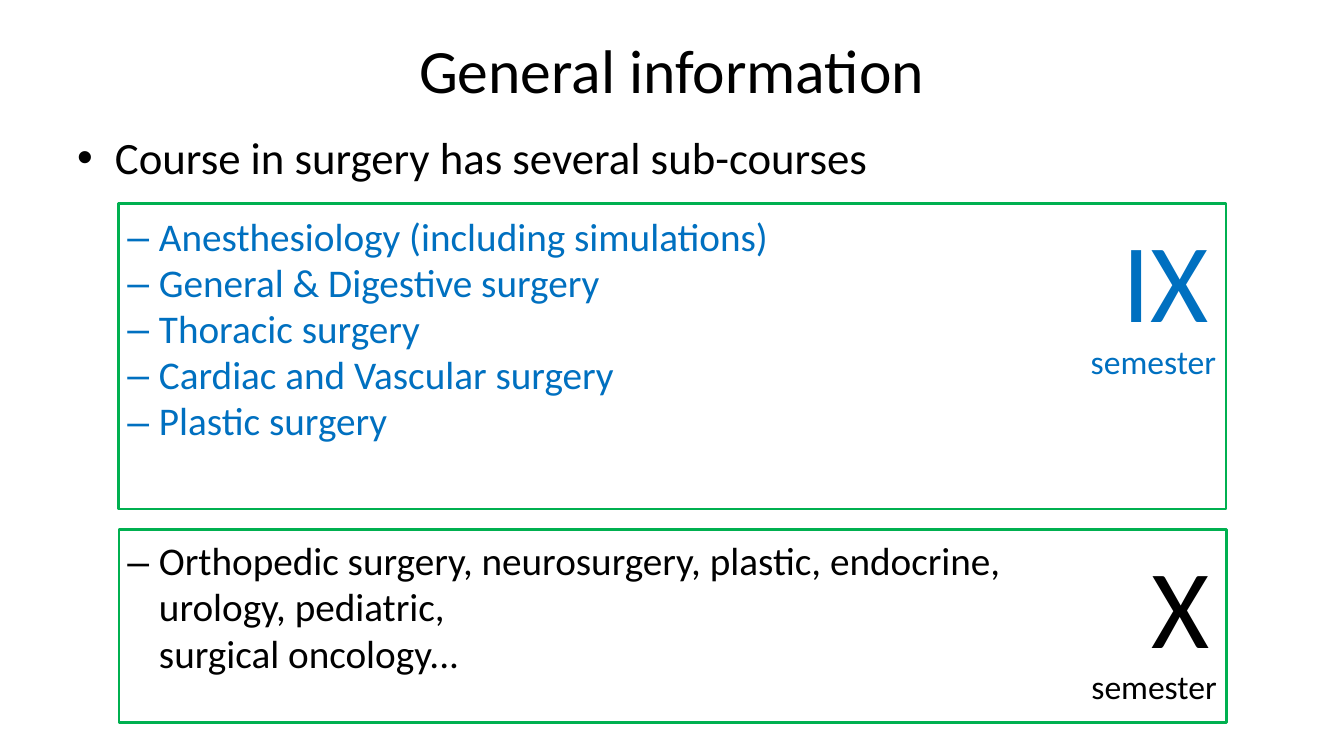
from dataclasses import dataclass

from lxml.etree import SubElement
from pptx import Presentation
from pptx.dml.color import RGBColor
from pptx.enum.shapes import MSO_SHAPE
from pptx.enum.text import MSO_ANCHOR, PP_ALIGN
from pptx.oxml.ns import qn
from pptx.slide import Slide
from pptx.text.text import TextFrame, _Paragraph
from pptx.util import Pt


@dataclass(frozen=True)
class Theme:
    """Colours, font and type sizes of the slide."""
    font: str = "Calibri"
    black: RGBColor = RGBColor(0, 0, 0)
    blue: RGBColor = RGBColor(0x00, 0x70, 0xC0)
    green: RGBColor = RGBColor(0x00, 0xB0, 0x50)
    white: RGBColor = RGBColor(255, 255, 255)
    title: float = 44
    lead: float = 32
    course: float = 28
    numeral: float = 80
    label: float = 24


@dataclass(frozen=True)
class Semester:
    """A framed semester with its numeral."""
    numeral: str
    left: float
    top: float
    height: float
    color: RGBColor


@dataclass(frozen=True)
class Entry:
    """A bulleted entry of the course list."""
    lines: tuple[str, ...]
    color: RGBColor
    size: float
    bullet: str = "–"
    margin: float = 58.5
    hanging: float = 22.5
    before: float = 0
    spacing: float = 0.98


THEME = Theme()
PANEL_WIDTH = 791.3
SEMESTERS = (
    Semester("X", 85, 378, 138.2, THEME.black),
    Semester("IX", 84.5, 145.6, 218, THEME.blue),
)
FIRST_COURSE, *OTHER_COURSES = (
    "Anesthesiology (including simulations)",
    "General & Digestive surgery",
    "Thoracic surgery",
    "Cardiac and Vascular surgery",
    "Plastic surgery",
)
ENTRIES = (
    Entry(("Course in surgery has several sub-courses",), THEME.black, THEME.lead,
          "•", 27, 27, spacing=1),
    Entry((FIRST_COURSE,), THEME.blue, THEME.course, before=22),
    *(Entry((course,), THEME.blue, THEME.course) for course in OTHER_COURSES),
    Entry(("Orthopedic surgery, neurosurgery, plastic, endocrine,",
           "urology, pediatric,", "surgical oncology..."),
          THEME.black, THEME.course, before=67),
)


def add_run(paragraph: _Paragraph, text: str, size: float, color: RGBColor) -> None:
    """Append one styled run."""
    run = paragraph.add_run()
    run.text = text
    run.font.name = THEME.font
    run.font.size = Pt(size)
    run.font.color.rgb = color


def add_text_area(slide: Slide, top: float, height: float) -> TextFrame:
    """Add a wrapping text area of the slide's content width."""
    frame = slide.shapes.add_textbox(Pt(48), Pt(top), Pt(864), Pt(height)).text_frame
    frame.word_wrap = True
    return frame


def draw_semester(slide: Slide, semester: Semester) -> None:
    """Draw a framed panel with the semester numeral at its right."""
    panel = slide.shapes.add_shape(
        MSO_SHAPE.RECTANGLE, Pt(semester.left), Pt(semester.top),
        Pt(PANEL_WIDTH), Pt(semester.height))
    panel.shadow.inherit = False
    panel.fill.solid()
    panel.fill.fore_color.rgb = THEME.white
    panel.line.color.rgb = THEME.green
    panel.line.width = Pt(2)
    frame = panel.text_frame
    frame.word_wrap = True
    frame.vertical_anchor = MSO_ANCHOR.TOP
    frame.margin_top = Pt(5)
    numeral = frame.paragraphs[0]
    numeral.alignment = PP_ALIGN.RIGHT
    add_run(numeral, semester.numeral, THEME.numeral, semester.color)
    add_run(numeral, " ", THEME.label, semester.color)
    label = frame.add_paragraph()
    label.alignment = PP_ALIGN.RIGHT
    label.line_spacing = 0.9
    add_run(label, "semester", THEME.label, semester.color)


def draw_entry(paragraph: _Paragraph, entry: Entry) -> None:
    """Write one bulleted entry with its line breaks."""
    paragraph.line_spacing = entry.spacing
    paragraph.space_before = Pt(entry.before)
    properties = paragraph._p.get_or_add_pPr()
    properties.set("marL", str(Pt(entry.margin)))
    properties.set("indent", str(-Pt(entry.hanging)))
    SubElement(properties, qn("a:buFont"), typeface="Arial")
    SubElement(properties, qn("a:buChar"), char=entry.bullet)
    for index, line in enumerate(entry.lines):
        if index:
            paragraph.add_line_break()
        add_run(paragraph, line, entry.size, entry.color)


def main() -> None:
    """Build and save the slide."""
    deck = Presentation()
    deck.slide_width, deck.slide_height = Pt(960), Pt(540)
    slide = deck.slides.add_slide(deck.slide_layouts[6])
    for semester in SEMESTERS:
        draw_semester(slide, semester)
    courses = add_text_area(slide, 89.3, 356.4)
    for index, entry in enumerate(ENTRIES):
        draw_entry(courses.add_paragraph() if index else courses.paragraphs[0], entry)
    heading = add_text_area(slide, 4.3, 90)
    heading.vertical_anchor = MSO_ANCHOR.MIDDLE
    heading.paragraphs[0].alignment = PP_ALIGN.CENTER
    add_run(heading.paragraphs[0], "General information", THEME.title, THEME.black)
    deck.save("out.pptx")


if __name__ == "__main__":
    main()
